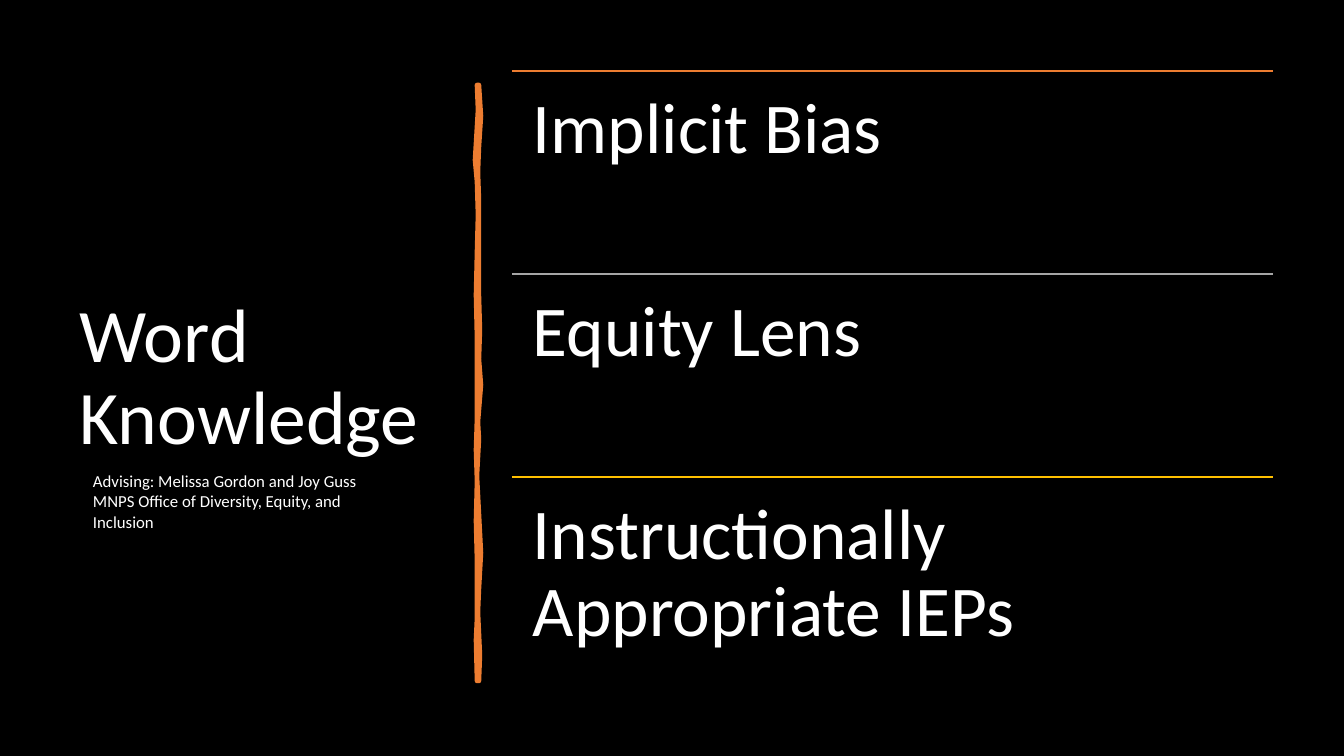
from lxml.etree import SubElement
from pptx import Presentation
from pptx.dml.color import RGBColor
from pptx.enum.shapes import MSO_CONNECTOR as Connector
from pptx.enum.text import MSO_ANCHOR as Anchor
from pptx.oxml.ns import qn
from pptx.util import Pt

BLACK = RGBColor(0x00, 0x00, 0x00)
WHITE = RGBColor(0xFF, 0xFF, 0xFF)
ORANGE = RGBColor(0xED, 0x7D, 0x31)
GRAY = RGBColor(0xA5, 0xA5, 0xA5)
GOLD = RGBColor(0xFF, 0xC0, 0x00)
FONT = "Calibri"

TITLE = "Word Knowledge"
ADVISORS = [
    "Advising: Melissa Gordon and Joy Guss",
    "MNPS Office of Diversity, Equity, and Inclusion",
]
TERMS = [
    ("Implicit Bias", ORANGE),
    ("Equity Lens", GRAY),
    ("Instructionally Appropriate IEPs", GOLD),
]
BRUSH_RIGHT = [
    (479, 85), (481, 116), (479, 147), (478, 172), (479, 200), (479, 228),
    (479, 296), (480, 330), (479, 359), (481, 385), (478, 422), (479, 439),
    (477, 476), (479, 514), (481, 553), (479, 589), (478, 612), (480, 655),
    (479, 681),
]
BRUSH_LEFT = [
    (477, 681), (476, 640), (477, 618), (477, 561), (476, 521), (477, 481),
    (476, 450), (477, 418), (477, 338), (476, 295), (477, 252), (478, 215),
    (477, 182), (475, 160), (478, 110), (477, 85),
]

PX = 914400 / 100.8
TERM_LEFT, TERM_TOP, TERM_WIDTH, TERM_HEIGHT = 512, 71, 761, 203


def px(value):
    return round(value * PX)


def add_text(slide, box, lines, size, inset=(10, 5), anchor=Anchor.TOP, spacing=1.0):
    shape = slide.shapes.add_textbox(*map(px, box))
    frame = shape.text_frame
    frame.word_wrap = True
    frame.vertical_anchor = anchor
    frame.margin_left = frame.margin_right = px(inset[0])
    frame.margin_top = frame.margin_bottom = px(inset[1])
    for index, line in enumerate(lines):
        paragraph = frame.paragraphs[0] if index == 0 else frame.add_paragraph()
        paragraph.line_spacing = spacing
        run = paragraph.add_run()
        run.text = line
        run.font.name = FONT
        run.font.size = Pt(size)
        run.font.color.rgb = WHITE


def add_brush(slide):
    start, *points = BRUSH_RIGHT + BRUSH_LEFT
    builder = slide.shapes.build_freeform(*start, scale=PX)
    builder.add_line_segments(points, close=True)
    shape = builder.convert_to_shape()
    shape.shadow.inherit = False
    shape.fill.solid()
    shape.fill.fore_color.rgb = ORANGE
    shape.line.color.rgb = ORANGE
    shape.line.width = Pt(3.25)


def add_rule(slide, top, color):
    right = TERM_LEFT + TERM_WIDTH
    rule = slide.shapes.add_connector(
        Connector.STRAIGHT, px(TERM_LEFT), px(top), px(right), px(top))
    rule.line.color.rgb = color
    rule.line.width = Pt(1)
    SubElement(rule._element.spPr, qn("a:effectLst"))


def main():
    presentation = Presentation()
    presentation.slide_width, presentation.slide_height = px(1344), px(756)
    slide = presentation.slides.add_slide(presentation.slide_layouts[6])
    slide.background.fill.solid()
    slide.background.fill.fore_color.rgb = BLACK

    add_text(slide, (70, 71, 377, 616), [TITLE], 54, anchor=Anchor.MIDDLE, spacing=0.9)
    add_brush(slide)
    for index, (term, color) in enumerate(TERMS):
        top = TERM_TOP + index * TERM_HEIGHT
        add_rule(slide, top, color)
        add_text(slide, (TERM_LEFT, top, TERM_WIDTH, TERM_HEIGHT), [term], 51,
                 inset=(21, 21), spacing=0.9)
    add_text(slide, (83, 466, 295, 72), ADVISORS, 12)

    presentation.save("out.pptx")


if __name__ == "__main__":
    main()
